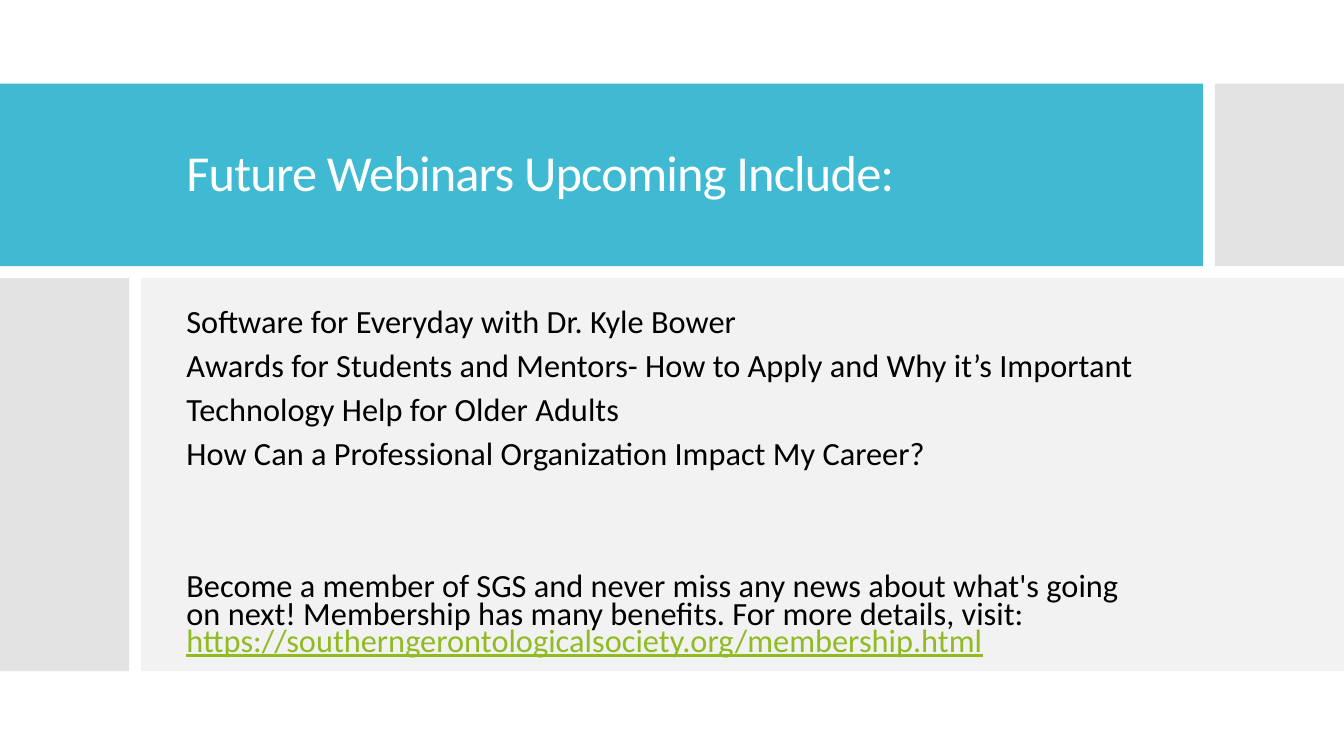
from pptx import Presentation
from pptx.dml.color import RGBColor as RGB
from pptx.enum.shapes import MSO_SHAPE as Kind
from pptx.enum.text import MSO_ANCHOR as Anchor
from pptx.util import Inches, Pt

HUES = {"teal": "40BAD2", "gray": "E3E3E3", "pale": "F2F2F2",
        "white": "FFFFFF", "black": "000000", "green": "90BB23"}

TOPICS = [
    "Software for Everyday with Dr. Kyle Bower",
    "Awards for Students and Mentors- How to Apply and Why it’s Important",
    "Technology Help for Older Adults",
    "How Can a Professional Organization Impact My Career?",
]
INVITE = ("Become a member of SGS and never miss any news about what's going "
          "on next! Membership has many benefits. For more details, visit: ")
LINK = "https://southerngerontologicalsociety.org/membership.html"


def add_band(slide, left, top, width, height, hue):
    band = slide.shapes.add_shape(Kind.RECTANGLE, Inches(left), Inches(top),
                                  Inches(width), Inches(height))
    band.shadow.inherit = False
    band.fill.solid()
    band.fill.fore_color.rgb = RGB.from_string(HUES[hue])
    band.line.fill.background()


def add_frame(slide, left, top, width, height, anchor):
    box = slide.shapes.add_textbox(Inches(left), Inches(top),
                                   Inches(width), Inches(height))
    frame = box.text_frame
    frame.word_wrap = True
    frame.vertical_anchor = anchor
    frame.margin_top = frame.margin_bottom = 0
    return frame


def add_text(para, text, size=23.1, hue="black", under=None, track=None):
    run = para.add_run()
    run.text = text
    font = run.font
    font.name = "Calibri"
    font.size = Pt(size)
    font.color.rgb = RGB.from_string(HUES[hue])
    font.underline = under
    if track is not None:
        font._element.set("spc", str(track))


def add_title(slide, text):
    frame = add_frame(slide, 1.75, 1.19, 9.82, 1.09, Anchor.MIDDLE)
    para = frame.paragraphs[0]
    para.line_spacing = 0.9
    add_text(para, text, size=36, hue="white", track=-60)


def add_body(slide):
    frame = add_frame(slide, 1.75, 3.09, 9.82, 3.5, Anchor.TOP)
    for i, text in enumerate(TOPICS + [INVITE]):
        para = frame.add_paragraph() if i else frame.paragraphs[0]
        para.line_spacing = 0.7
        if i:
            # The invitation stands apart from the topics
            para.space_before = Pt(75.4 if text == INVITE else 12)
        add_text(para, text)
    add_text(para, LINK, hue="green", under=True)


def main():
    deck = Presentation()
    deck.slide_width, deck.slide_height = Inches(13.33), Inches(7.5)
    slide = deck.slides.add_slide(deck.slide_layouts[6])

    # Title row
    add_band(slide, 0, 0.83, 11.93, 1.81, "teal")
    add_band(slide, 12.05, 0.83, 1.28, 1.81, "gray")
    add_title(slide, "Future Webinars Upcoming Include:")

    # Content row
    add_band(slide, 0, 2.76, 1.28, 3.9, "gray")
    add_band(slide, 1.4, 2.76, 11.93, 3.9, "pale")
    add_body(slide)

    deck.save("out.pptx")


if __name__ == "__main__":
    main()
